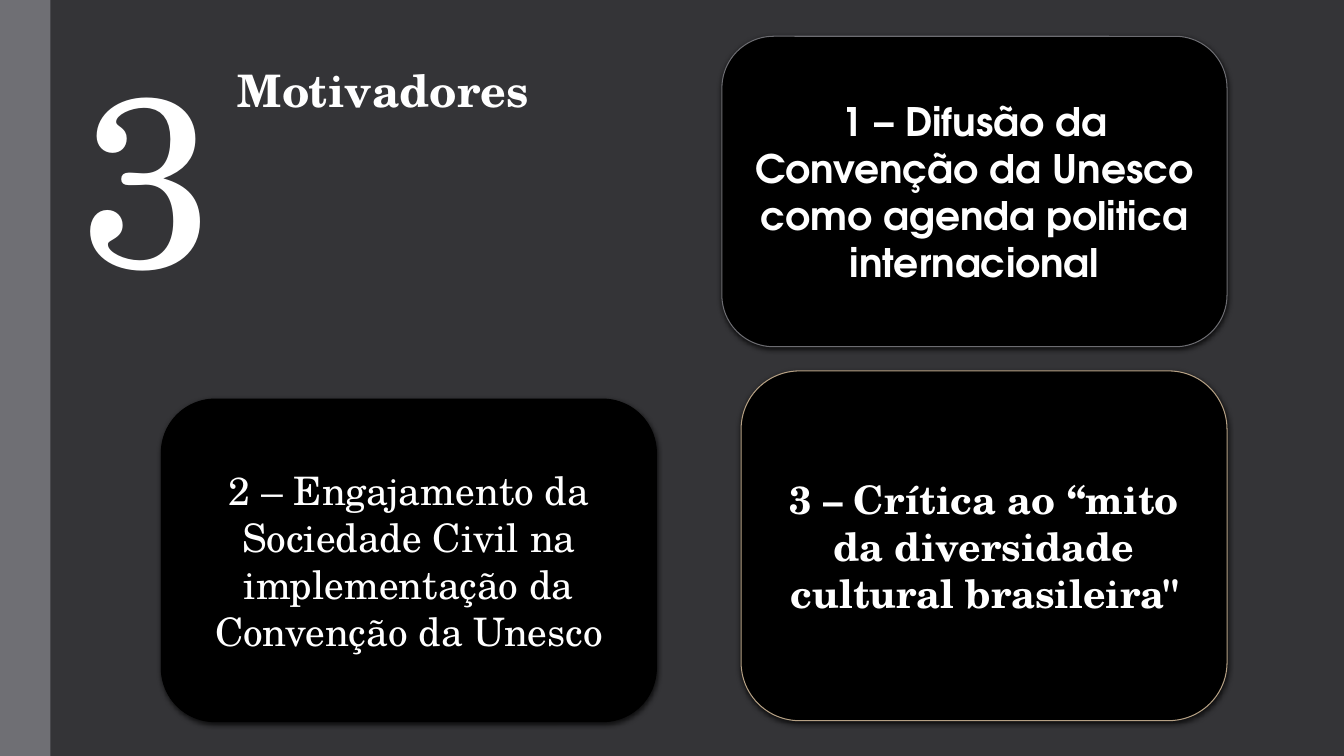
"""Build the slide on the three motivators."""
from lxml.etree import SubElement
from pptx import Presentation
from pptx.dml.color import RGBColor
from pptx.enum.shapes import MSO_SHAPE
from pptx.enum.text import MSO_ANCHOR, MSO_AUTO_SIZE, PP_ALIGN
from pptx.oxml.ns import qn
from pptx.util import Inches, Pt

BACKGROUND = RGBColor(0x34, 0x34, 0x37)
BAR = RGBColor(0x6F, 0x6F, 0x74)
GRAY = RGBColor(0x6C, 0x6C, 0x71)
SAND = RGBColor(0xB5, 0xA0, 0x84)
BLACK = RGBColor(0, 0, 0)
WHITE = RGBColor(0xFF, 0xFF, 0xFF)
SERIF = "TeX Gyre Schola"
SANS = "TeX Gyre Adventor"

CARDS = [
    ((7.16, 0.36, 5.01, 3.08), GRAY, SANS, True,
     "1 – Difusão da Convenção da Unesco como agenda politica internacional"),
    ((1.6, 3.96, 4.91, 3.2), BLACK, SERIF, False,
     "2 – Engajamento da Sociedade Civil na implementação da Convenção da Unesco"),
    ((7.35, 3.68, 4.82, 3.47), SAND, SERIF, True,
     "3 – Crítica ao “mito da diversidade cultural brasileira\""),
]


def write(shape, text, size, font, bold, align, anchor, tracking=0):
    """Fill a shape with one formatted run and return its paragraph."""
    frame = shape.text_frame
    frame.word_wrap = True
    frame.auto_size = MSO_AUTO_SIZE.NONE
    frame.vertical_anchor = anchor
    para = frame.paragraphs[0]
    para.alignment = align
    span = para.add_run()
    span.text = text
    span.font.name = font
    span.font.size = Pt(size)
    span.font.bold = bold
    span.font.color.rgb = WHITE
    if tracking:
        span.font._element.set("spc", str(tracking))
    return para


def add_shadow(shape):
    """Give a shape a soft shadow straight below it."""
    effects = SubElement(shape._element.spPr, qn("a:effectLst"))
    shadow = SubElement(effects, qn("a:outerShdw"), blurRad=str(Pt(4)),
                        dist=str(Pt(1.2)), dir="5400000", rotWithShape="0")
    color = SubElement(shadow, qn("a:srgbClr"), val=str(BLACK))
    SubElement(color, qn("a:alpha"), val="75000")


def add_bar(page):
    """Draw the bar along the left edge."""
    bar = page.shapes.add_shape(MSO_SHAPE.RECTANGLE, 0, 0, Inches(0.5), Inches(7.5))
    bar.shadow.inherit = False
    bar.fill.solid()
    bar.fill.fore_color.rgb = BAR
    bar.line.fill.background()


def add_number(page):
    """Write the large number beside the title."""
    box = page.shapes.add_textbox(Inches(0.7), Inches(0.36), Inches(1.79), Inches(2.83))
    para = write(box, "3", 172, SERIF, False, PP_ALIGN.LEFT, MSO_ANCHOR.BOTTOM, -50)
    para.line_spacing = 0.85


def set_title(page):
    """Place and write the title."""
    title = page.shapes.title
    title.left, title.top = Inches(2.26), Inches(0.61)
    title.width, title.height = Inches(9.23), Inches(2.83)
    para = write(title, "Motivadores", 32, SERIF, True, PP_ALIGN.LEFT, MSO_ANCHOR.TOP, 10)
    para.line_spacing = 0.95
    para.space_before = Pt(14)
    para.space_after = Pt(2)


def add_card(page, place, outline, font, bold, text):
    """Draw a rounded black card with centred text."""
    card = page.shapes.add_shape(MSO_SHAPE.ROUNDED_RECTANGLE, *map(Inches, place))
    card.fill.solid()
    card.fill.fore_color.rgb = BLACK
    card.line.color.rgb = outline
    card.line.width = Pt(0.75)
    add_shadow(card)
    write(card, text, 28, font, bold, PP_ALIGN.CENTER, MSO_ANCHOR.MIDDLE)


def main():
    """Build and save the deck."""
    deck = Presentation()
    deck.slide_width, deck.slide_height = Inches(13.33), Inches(7.5)
    page = deck.slides.add_slide(deck.slide_layouts[5])
    page.background.fill.solid()
    page.background.fill.fore_color.rgb = BACKGROUND
    add_bar(page)
    add_number(page)
    set_title(page)
    for card in CARDS:
        add_card(page, *card)
    deck.save("out.pptx")


if __name__ == "__main__":
    main()
